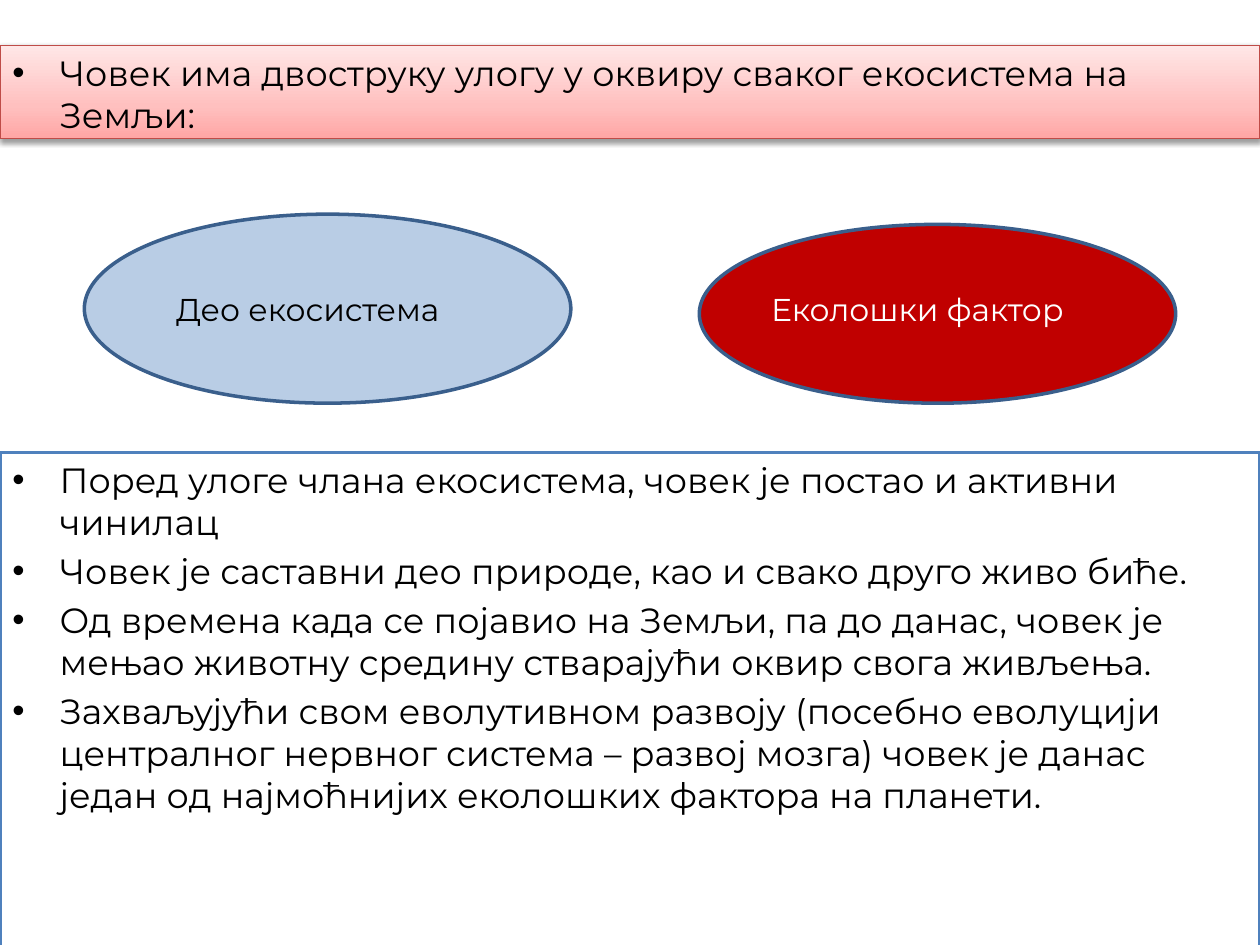
from lxml import etree
from pptx import Presentation
from pptx.dml.color import RGBColor as Rgb
from pptx.enum.shapes import MSO_SHAPE as Kind
from pptx.enum.text import MSO_ANCHOR as Anchor, PP_ALIGN as Align
from pptx.oxml import parse_xml
from pptx.oxml.ns import nsdecls, qn
from pptx.util import Pt


def color(code):
    return Rgb.from_string(code)


def write(frame, *lines, size=20, ink="000000", font="Montserrat", bullet=False):
    frame.word_wrap = True
    frame.vertical_anchor = Anchor.TOP
    for i, line in enumerate(lines):
        para = frame.add_paragraph() if i else frame.paragraphs[0]
        para.alignment = Align.LEFT
        run = para.add_run()
        run.text = line
        run.font.size = Pt(size)
        run.font.name = font
        run.font.color.rgb = color(ink)
        if bullet:
            para.space_before = Pt(size * 0.2)
            props = para._p.get_or_add_pPr()
            props.set("marL", str(Pt(27)))
            props.set("indent", str(Pt(-27)))
            etree.SubElement(props, qn("a:buFont")).set("typeface", "Arial")
            etree.SubElement(props, qn("a:buChar")).set("char", "•")


class Page:
    def __init__(self, deck):
        self.shapes = deck.slides.add_slide(deck.slide_layouts[6]).shapes

    def shape(self, kind, box, fill, line, width=2):
        item = self.shapes.add_shape(kind, *map(Pt, box))
        item.shadow.inherit = False
        item.fill.solid()
        item.fill.fore_color.rgb = color(fill)
        item.line.color.rgb = color(line)
        item.line.width = Pt(width)
        return item

    def panel(self, box, *lines, fill="FFFFFF", line="4F81BD", width=2):
        item = self.shape(Kind.RECTANGLE, box, fill, line, width)
        write(item.text_frame, *lines, bullet=True)
        return item

    def oval(self, box, fill):
        return self.shape(Kind.OVAL, box, fill, "3A5F8C")

    def label(self, box, text, ink):
        item = self.shapes.add_textbox(*map(Pt, box))
        write(item.text_frame, text, size=18, ink=ink)

    def shade(self, item, stops, angle):
        item.fill.gradient()
        item.fill.gradient_angle = angle
        track = item._element.spPr.find(qn("a:gradFill")).find(qn("a:gsLst"))
        for stop in list(track):
            track.remove(stop)
        for pos, code in stops:
            stop = etree.SubElement(track, qn("a:gs"), pos=str(pos * 1000))
            etree.SubElement(stop, qn("a:srgbClr"), val=code)

    def drop(self, item, blur, dist, alpha):
        effects = item._element.spPr.find(qn("a:effectLst"))
        effects.append(parse_xml(
            f'<a:outerShdw {nsdecls("a")} blurRad="{Pt(blur)}" dist="{Pt(dist)}"'
            f' dir="5400000" rotWithShape="0"><a:srgbClr val="000000">'
            f'<a:alpha val="{alpha * 1000}"/></a:srgbClr></a:outerShdw>'))


def main():
    deck = Presentation()
    deck.slide_width, deck.slide_height = Pt(720), Pt(540)
    page = Page(deck)

    # Heading band
    head = page.panel(
        (0, 25.9, 720, 53.3),
        "Човек има двоструку улогу у оквиру сваког екосистема на Земљи:",
        line="BF4C48", width=0.75)
    page.shade(head, [(0, "FFA6A5"), (35, "FFC0BF"), (100, "FFE7E7")], 90)
    page.drop(head, 3.1, 1.6, 38)

    # Explanation
    page.panel(
        (0, 258.5, 720, 288.7),
        "Поред улоге члана екосистема, човек је постао и активни чинилац",
        "Човек је саставни део природе, као и свако друго живо биће.",
        "Од времена када се појавио на Земљи, па до данас, човек је мењао "
        "животну средину стварајући оквир свога живљења.",
        "Захваљујући свом еволутивном развоју (посебно еволуцији централног "
        "нервног система – развој мозга) човек је данас један од најмоћнијих "
        "еколошких фактора на планети.")

    # The two roles
    page.oval((48.2, 122.4, 278, 108), "B9CDE5")
    page.oval((399.6, 128.2, 272.2, 102.2), "C00000")
    page.label((93.6, 162, 193, 29), "Део екосистема", "000000")
    page.label((433.6, 162, 221, 29), "Еколошки фактор", "FFFFFF")

    deck.save("out.pptx")


if __name__ == "__main__":
    main()
